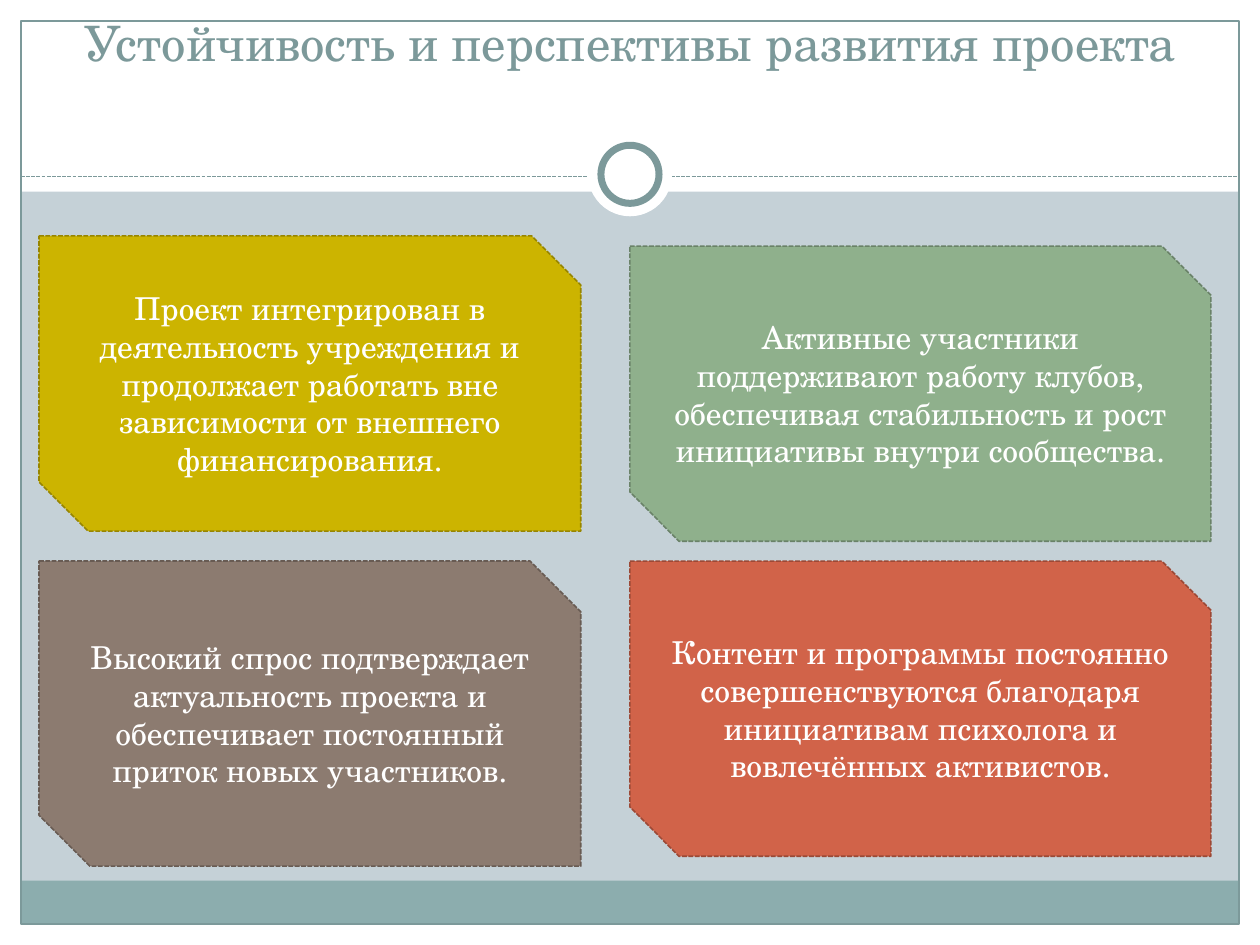
from pptx import Presentation
from pptx.dml.color import RGBColor
from pptx.enum.dml import MSO_LINE
from pptx.enum.shapes import MSO_CONNECTOR, MSO_SHAPE as Geo
from pptx.enum.text import MSO_ANCHOR, PP_ALIGN
from pptx.util import Pt
from lxml import etree
from pptx.oxml.ns import qn

WHITE = RGBColor(0xFF, 0xFF, 0xFF)
BACK = RGBColor(0xC5, 0xD1, 0xD7)
TEAL = RGBColor(0x7C, 0x99, 0x9A)
BAND = RGBColor(0x8C, 0xAD, 0xAE)
GOLD, OLIVE = RGBColor(0xCC, 0xB4, 0x00), RGBColor(0x97, 0x85, 0x00)
TAUPE, BROWN = RGBColor(0x8C, 0x7B, 0x70), RGBColor(0x68, 0x5B, 0x53)
SAGE, MOSS = RGBColor(0x8F, 0xB0, 0x8C), RGBColor(0x6A, 0x82, 0x68)
CORAL, RUST = RGBColor(0xD1, 0x63, 0x49), RGBColor(0x9B, 0x49, 0x36)
FONT = "TeX Gyre Schola"
W, H, EDGE = 720, 540, 12


def add_shape(geo, box, fill=None, line=None, width=0.75):
    shape = shapes.add_shape(geo, *map(Pt, box))
    shape.shadow.inherit = False
    if fill is None:
        shape.fill.background()
    else:
        shape.fill.solid()
        shape.fill.fore_color.rgb = fill
    if line is None:
        shape.line.fill.background()
    else:
        shape.line.color.rgb = line
        shape.line.width = Pt(width)
    return shape


def set_text(shape, text, size, color):
    frame = shape.text_frame
    frame.word_wrap = True
    para = frame.paragraphs[0]
    para.text = text
    para.alignment = PP_ALIGN.CENTER
    para.font.name = FONT
    para.font.size = Pt(size)
    para.font.color.rgb = color


prs = Presentation()
prs.slide_width, prs.slide_height = Pt(W), Pt(H)
slide = prs.slides.add_slide(prs.slide_layouts[5])
shapes = slide.shapes
slide.background.fill.solid()
slide.background.fill.fore_color.rgb = BACK

# White margins, footer band and frame
margins = [
    (0, H - EDGE, W, EDGE),
    (0, 0, W, 109.5),
    (0, 0, EDGE, H),
    (W - EDGE, 0, EDGE, H),
]
for box in margins:
    add_shape(Geo.RECTANGLE, box, WHITE)
add_shape(Geo.RECTANGLE, (EDGE, 503.3, W - 2 * EDGE, 24.5), BAND)
add_shape(Geo.RECTANGLE, (EDGE, EDGE, W - 2 * EDGE, H - 2 * EDGE), line=TEAL)

# Dashed rule with a ring at its middle
rule = shapes.add_connector(
    MSO_CONNECTOR.STRAIGHT, Pt(EDGE), Pt(100.8), Pt(W - EDGE), Pt(100.8))
rule.line.color.rgb = TEAL
rule.line.width = Pt(0.75)
rule.line.dash_style = MSO_LINE.SQUARE_DOT
etree.SubElement(rule.element.spPr, qn("a:effectLst"))
add_shape(Geo.OVAL, (336, 75.6, 48, 48), WHITE)
add_shape(Geo.OVAL, (343.4, 83, 33.2, 33.2), WHITE, TEAL, 4)

# Title, brought in front of the white margins
title = shapes.title
title.element.getparent().append(title.element)
title.left, title.top, title.width, title.height = map(Pt, (24, 18, 672, 60))
title.text_frame.vertical_anchor = MSO_ANCHOR.BOTTOM
title.text_frame.margin_bottom = Pt(37.2)
set_text(title, "Устойчивость и перспективы развития проекта", 27.9, TEAL)

cards = [
    ((22.3, 134.8, 309.6, 168.7), GOLD, OLIVE,
     "Проект интегрирован в деятельность учреждения и продолжает "
     "работать вне зависимости от внешнего финансирования."),
    ((22.3, 320.6, 309.6, 174.4), TAUPE, BROWN,
     "Высокий спрос подтверждает актуальность проекта и обеспечивает "
     "постоянный приток новых участников."),
    ((360, 140.6, 332, 168.7), SAGE, MOSS,
     "Активные участники поддерживают работу клубов, обеспечивая "
     "стабильность и рост инициативы внутри сообщества."),
    ((360, 320.6, 332, 168.7), CORAL, RUST,
     "Контент и программы постоянно совершенствуются благодаря "
     "инициативам психолога и вовлечённых активистов."),
]
for box, fill, line, text in cards:
    card = add_shape(Geo.SNIP_2_DIAG_RECTANGLE, box, fill, line, 0.9)
    card.line.dash_style = MSO_LINE.SQUARE_DOT
    card.text_frame.vertical_anchor = MSO_ANCHOR.MIDDLE
    set_text(card, text, 18, WHITE)

prs.save("out.pptx")
